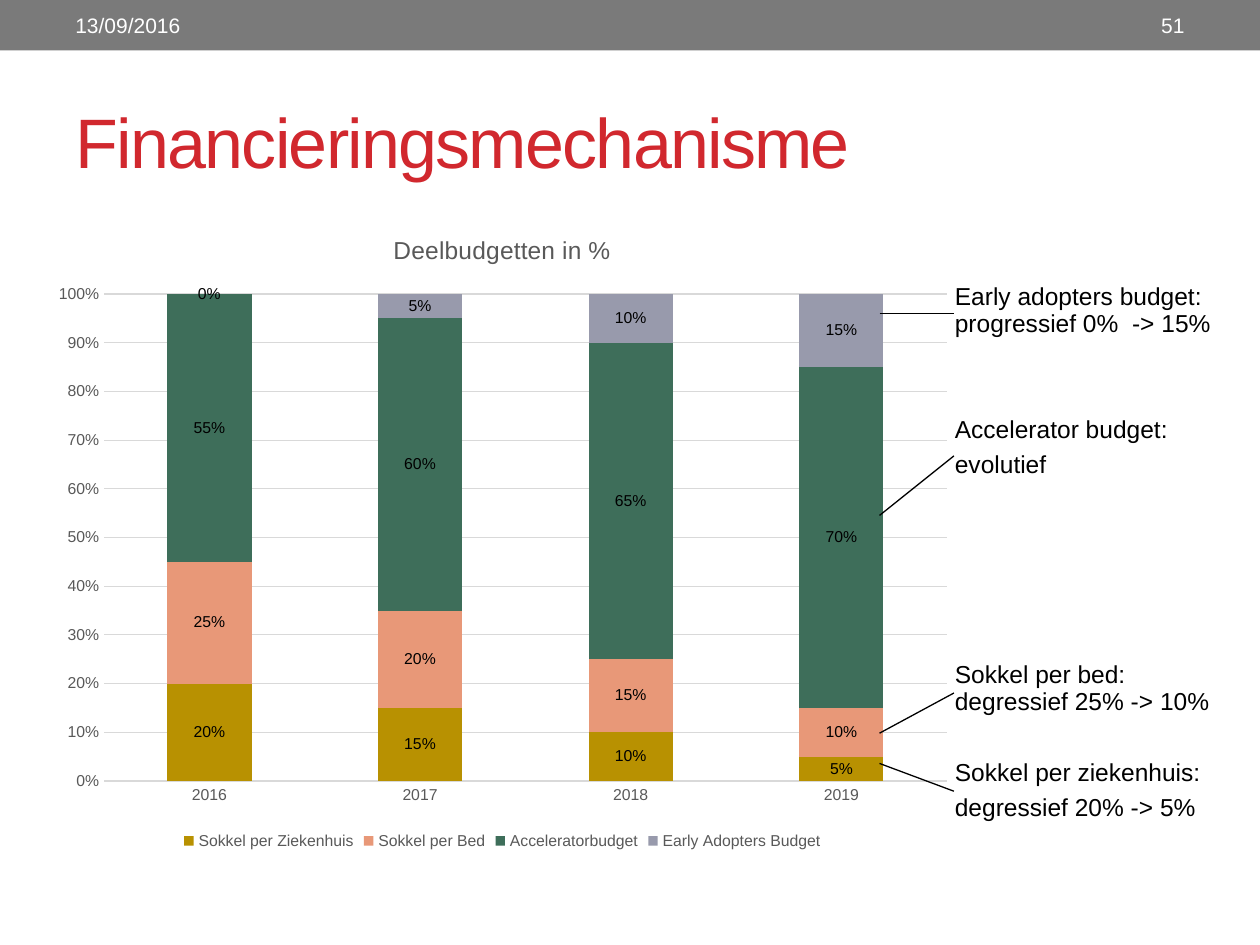
from dataclasses import dataclass

from lxml import etree
from pptx import Presentation
from pptx.chart.data import CategoryChartData
from pptx.dml.color import RGBColor
from pptx.enum.chart import XL_CHART_TYPE, XL_LABEL_POSITION, XL_LEGEND_POSITION, XL_TICK_MARK
from pptx.enum.shapes import MSO_CONNECTOR, MSO_SHAPE
from pptx.enum.text import MSO_ANCHOR, PP_ALIGN
from pptx.oxml.ns import qn
from pptx.util import Cm, Pt

STACKED = XL_CHART_TYPE.COLUMN_STACKED
CENTER = XL_LABEL_POSITION.CENTER
BOTTOM = XL_LEGEND_POSITION.BOTTOM
NO_TICK = XL_TICK_MARK.NONE
STRAIGHT = MSO_CONNECTOR.STRAIGHT
RECTANGLE = MSO_SHAPE.RECTANGLE
MIDDLE, TOP = MSO_ANCHOR.MIDDLE, MSO_ANCHOR.TOP
LEFT, RIGHT = PP_ALIGN.LEFT, PP_ALIGN.RIGHT
TITLE_ONLY = 5


@dataclass(frozen=True)
class Theme:
    font: str = "Arial"
    red: str = "D1282E"
    band: str = "7A7A7A"
    white: str = "FFFFFF"
    black: str = "000000"
    muted: str = "595959"
    grid: str = "D9D9D9"
    title_size: int = 40
    note_size: int = 14
    header_size: int = 12
    chart_size: int = 9


THEME = Theme()
YEARS = ["2016", "2017", "2018", "2019"]
BUDGETS = [
    ("Sokkel per Ziekenhuis", "B89101", (0.2, 0.15, 0.1, 0.05)),
    ("Sokkel per Bed", "E89878", (0.25, 0.2, 0.15, 0.1)),
    ("Acceleratorbudget", "3E6E5A", (0.55, 0.6, 0.65, 0.7)),
    ("Early Adopters Budget", "989AAC", (0, 0.05, 0.1, 0.15)),
]
PLOT_AREA = {"x": 0.07, "y": 0.13, "w": 0.91, "h": 0.755}
NOTE_LEFT, NOTE_WIDTH, NOTE_HEIGHT = 19.25, 5.72, 1.3
LEADER_START, LEADER_END = 17.73, 19.23
NOTES = [
    (["Early adopters budget: progressief 0%  -> 15%"], 5.74, 6.32, 6.32),
    (["Accelerator budget:", "evolutief"], 8.41, 10.39, 9.19),
    (["Sokkel per bed: degressief 25% -> 10%"], 13.36, 14.78, 13.97),
    (["Sokkel per ziekenhuis:", "degressief 20% -> 5%"], 15.32, 15.39, 15.95),
]


def color(value):
    return RGBColor.from_string(value)


def style_font(font, size, value):
    font.name = THEME.font
    font.size = Pt(size)
    font.bold = False
    font.color.rgb = color(value)


def add_text(page, lines, left, top, width, height, size, value, anchor=TOP, align=LEFT):
    box = page.shapes.add_textbox(Cm(left), Cm(top), Cm(width), Cm(height))
    frame = box.text_frame
    frame.word_wrap = True
    frame.vertical_anchor = anchor
    frame.margin_left = frame.margin_right = frame.margin_top = frame.margin_bottom = 0
    frame.text = "\n".join(lines)
    for para in frame.paragraphs:
        para.alignment = align
        style_font(para.font, size, value)
    return frame


def add_header(page, width):
    band = page.shapes.add_shape(RECTANGLE, 0, 0, width, Cm(1.02))
    band.shadow.inherit = False
    band.fill.solid()
    band.fill.fore_color.rgb = color(THEME.band)
    band.line.fill.background()
    for text, left, width_cm, align in [("13/09/2016", 1.52, 7.5, LEFT), ("51", 21.4, 2.48, RIGHT)]:
        add_text(page, [text], left, 0.05, width_cm, 0.92,
                 THEME.header_size, THEME.white, MIDDLE, align)


def format_title(page, text):
    title = page.shapes.title
    title.left, title.top, title.width, title.height = Cm(1.27), Cm(1.47), Cm(22.86), Cm(2.74)
    frame = title.text_frame
    frame.text = text
    frame.vertical_anchor = MIDDLE
    para = frame.paragraphs[0]
    para.alignment = LEFT
    span = para.runs[0]
    style_font(span.font, THEME.title_size, THEME.red)
    span.font._element.set("spc", "-100")


def place_plot(chart):
    area = chart._chartSpace.find(".//" + qn("c:plotArea"))
    for old in area.findall(qn("c:layout")):
        area.remove(old)
    layout = etree.Element(qn("c:layout"))
    manual = etree.SubElement(layout, qn("c:manualLayout"))
    settings = {"layoutTarget": "inner", "xMode": "edge", "yMode": "edge", **PLOT_AREA}
    for name, value in settings.items():
        etree.SubElement(manual, qn(f"c:{name}")).set("val", str(value))
    area.insert(0, layout)


def format_axes(chart):
    for axis in (chart.category_axis, chart.value_axis):
        axis.major_tick_mark = axis.minor_tick_mark = NO_TICK
        style_font(axis.tick_labels.font, THEME.chart_size, THEME.muted)
    values = chart.value_axis
    values.minimum_scale, values.maximum_scale, values.major_unit = 0, 1, 0.1
    values.tick_labels.number_format = "0%"
    values.tick_labels.number_format_is_linked = False
    values.has_major_gridlines = True
    values.format.line.fill.background()
    for line in (chart.category_axis.format.line, values.major_gridlines.format.line):
        line.color.rgb = color(THEME.grid)
        line.width = Pt(0.75)


def format_series(series, value):
    series.format.fill.solid()
    series.format.fill.fore_color.rgb = color(value)
    labels = series.data_labels
    labels.show_value = True
    labels.number_format = "0%"
    labels.number_format_is_linked = False
    labels.position = CENTER
    style_font(labels.font, THEME.chart_size, THEME.black)


def add_budget_chart(page):
    data = CategoryChartData(number_format="0%")
    data.categories = YEARS
    for name, _, values in BUDGETS:
        data.add_series(name, values)
    chart = page.shapes.add_chart(STACKED, Cm(0.79), Cm(4.24), Cm(18.67), Cm(13), data).chart
    style_font(chart.font, THEME.chart_size, THEME.black)
    chart.has_title = True
    chart.chart_title.include_in_layout = False
    frame = chart.chart_title.text_frame
    frame.text = "Deelbudgetten in %"
    style_font(frame.paragraphs[0].runs[0].font, THEME.note_size, THEME.muted)
    chart.has_legend = True
    chart.legend.position = BOTTOM
    chart.legend.include_in_layout = False
    style_font(chart.legend.font, THEME.chart_size, THEME.muted)
    plot = chart.plots[0]
    plot.gap_width, plot.overlap, plot.vary_by_categories = 150, 100, False
    for series, (_, value, _) in zip(plot.series, BUDGETS):
        format_series(series, value)
    format_axes(chart)
    place_plot(chart)


def add_note(page, lines, top, start, end):
    frame = add_text(page, lines, NOTE_LEFT, top, NOTE_WIDTH, NOTE_HEIGHT,
                     THEME.note_size, THEME.black)
    for para in frame.paragraphs:
        para.line_spacing = 0.9
    for para in frame.paragraphs[1:]:
        para.space_before = Pt(5)
    leader = page.shapes.add_connector(
        STRAIGHT, Cm(LEADER_START), Cm(start), Cm(LEADER_END), Cm(end))
    leader.line.color.rgb = color(THEME.black)
    leader.line.width = Pt(0.75)
    etree.SubElement(leader._element.spPr, qn("a:effectLst"))


def main():
    deck = Presentation()
    deck.slide_width, deck.slide_height = Cm(25.4), Cm(19.05)
    page = deck.slides.add_slide(deck.slide_layouts[TITLE_ONLY])
    add_header(page, deck.slide_width)
    format_title(page, "Financieringsmechanisme")
    add_budget_chart(page)
    for note in NOTES:
        add_note(page, *note)
    deck.save("out.pptx")


if __name__ == "__main__":
    main()
